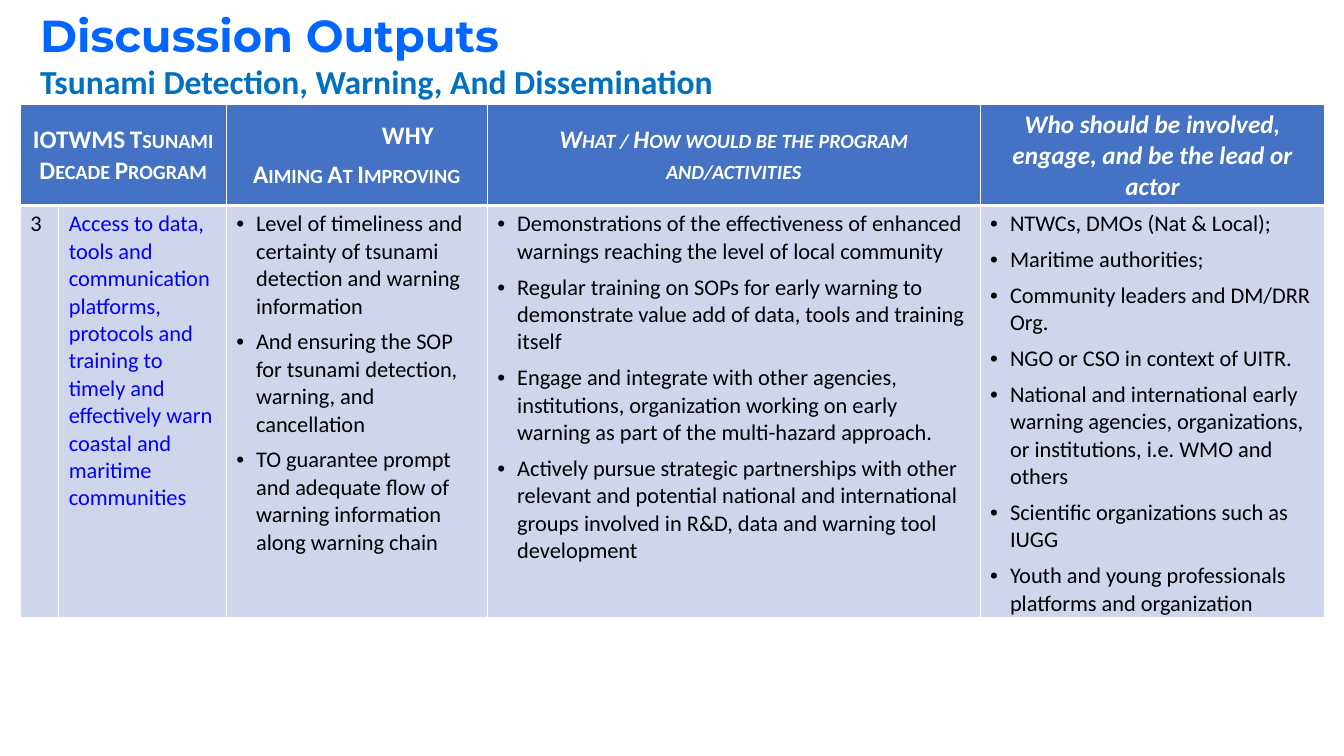
from dataclasses import dataclass, field
from typing import Any

from lxml.etree import SubElement
from pptx import Presentation
from pptx.dml.color import RGBColor
from pptx.enum.text import MSO_ANCHOR, PP_ALIGN
from pptx.oxml.ns import qn
from pptx.util import Cm, Pt

HUES = {
    "title": "0066FF",
    "sub": "0070C0",
    "head": "4472C4",
    "body": "CFD5EA",
    "topic": "0000FF",
    "ink": "000000",
    "white": "FFFFFF",
}
TITLE = {"name": "Montserrat", "size": Pt(32), "bold": True}
SUB = {"name": "Calibri", "size": Pt(24), "bold": True}
HEAD = {"name": "Calibri", "size": Pt(18), "bold": True, "italic": False}
SLANT = HEAD | {"italic": True}
BODY = {"name": "Calibri", "size": Pt(16), "bold": False, "italic": False}
COLS = [0.97, 4.22, 6.58, 12.42, 8.69]
ROWS = [2.49, 10.39]


@dataclass
class Entry:
    row: int
    col: int
    lines: list[str]
    style: dict[str, Any] = field(default_factory=lambda: BODY)
    hue: str = "ink"
    caps: bool = False
    list: bool = False
    shift: float = 0


ENTRIES = [
    Entry(0, 0, ["IOTWMS Tsunami Decade Program"], HEAD, "white", True),
    Entry(0, 2, ["WHY", "Aiming At Improving"], HEAD, "white", True, shift=1.27),
    Entry(0, 3, ["What / How would be the program and/activities"], SLANT, "white", True),
    Entry(0, 4, ["Who should be involved, engage, and be the lead or actor"], SLANT, "white"),
    Entry(1, 0, ["3"]),
    Entry(1, 1, ["Access to data, tools and communication platforms, protocols and training "
                 "to timely and effectively warn coastal and maritime communities"], hue="topic"),
    Entry(1, 2, [
        "Level of timeliness and certainty of tsunami detection and warning information",
        "And ensuring the SOP for tsunami detection, warning, and cancellation",
        "TO guarantee prompt and adequate flow of warning information along warning chain",
    ], list=True),
    Entry(1, 3, [
        "Demonstrations of the effectiveness of enhanced warnings reaching the level of local community",
        "Regular training on SOPs for early warning to demonstrate value add of data, tools and training itself",
        "Engage and integrate with other agencies, institutions, organization working on early warning "
        "as part of the multi-hazard approach.",
        "Actively pursue strategic partnerships with other relevant and potential national and "
        "international groups involved in R&D, data and warning tool development",
    ], list=True),
    Entry(1, 4, [
        "NTWCs, DMOs (Nat & Local);",
        "Maritime authorities;",
        "Community leaders and DM/DRR Org.",
        "NGO or CSO in context of UITR.",
        "National and international early warning agencies, organizations, or institutions, i.e. WMO and others",
        "Scientific organizations such as IUGG",
        "Youth and young professionals platforms and organization",
    ], list=True),
]


def paint(font: Any, style: dict[str, Any], hue: str) -> None:
    for name, value in style.items():
        setattr(font, name, value)
    font.color.rgb = RGBColor.from_string(HUES[hue])


def place(shape: Any, box: tuple[float, float, float, float]) -> None:
    for name, size in zip(("left", "top", "width", "height"), box):
        setattr(shape, name, Cm(size))


def write(shape: Any, text: str, style: dict[str, Any], hue: str) -> Any:
    shape.text_frame.word_wrap = True
    line = shape.text_frame.paragraphs[0]
    line.alignment = PP_ALIGN.LEFT
    run = line.add_run()
    run.text = text
    paint(run.font, style, hue)
    return line


def edge(cell: Any, head: bool) -> None:
    props = cell._tc.get_or_add_tcPr()
    for side in ("L", "R", "T", "B"):
        width = Pt(3 if head and side == "B" else 1)
        rule = SubElement(props, qn(f"a:ln{side}"), w=str(int(width)))
        fill = SubElement(rule, qn("a:solidFill"))
        SubElement(fill, qn("a:srgbClr"), val=HUES["white"])


def fill_cell(cell: Any, entry: Entry) -> None:
    head = entry.row == 0
    cell.vertical_anchor = MSO_ANCHOR.MIDDLE if head else MSO_ANCHOR.TOP
    frame = cell.text_frame
    for spot, text in enumerate(entry.lines):
        line = frame.add_paragraph() if spot else frame.paragraphs[0]
        line.alignment = PP_ALIGN.CENTER if head else PP_ALIGN.LEFT
        line.space_before = Pt(3 if spot else 0)
        line.space_after = Pt(3)
        props = line._p.get_or_add_pPr()
        if entry.list:
            props.set("marL", str(int(Cm(0.5))))
            props.set("indent", str(int(Cm(-0.5))))
            SubElement(props, qn("a:buFont"), typeface="Arial")
            SubElement(props, qn("a:buChar"), char="•")
        elif entry.shift and not spot:
            props.set("indent", str(int(Cm(entry.shift))))
        run = line.add_run()
        run.text = text
        paint(run.font, entry.style, entry.hue)
        if entry.caps:
            run._r.get_or_add_rPr().set("cap", "small")


def main() -> None:
    deck = Presentation()
    deck.slide_width, deck.slide_height = Cm(33.87), Cm(19.05)
    slide = deck.slides.add_slide(deck.slide_layouts[5])

    title = slide.shapes.title
    place(title, (0.76, 0, 31.34, 1.9))
    title.text_frame.vertical_anchor = MSO_ANCHOR.MIDDLE
    write(title, "Discussion Outputs", TITLE, "title").line_spacing = 0.9

    sub = slide.shapes.add_textbox(Cm(0.76), Cm(1.42), Cm(20.47), Cm(1.27))
    write(sub, "Tsunami Detection, Warning, And Dissemination", SUB, "sub")

    table = slide.shapes.add_table(
        len(ROWS), len(COLS), Cm(0.51), Cm(2.64), Cm(sum(COLS)), Cm(sum(ROWS))
    ).table
    for col, width in zip(table.columns, COLS):
        col.width = Cm(width)
    for row, height in zip(table.rows, ROWS):
        row.height = Cm(height)
    for spot, cell in enumerate(table.iter_cells()):
        head = spot < len(COLS)
        edge(cell, head)
        cell.fill.solid()
        cell.fill.fore_color.rgb = RGBColor.from_string(HUES["head" if head else "body"])
    table.cell(0, 0).merge(table.cell(0, 1))
    for entry in ENTRIES:
        fill_cell(table.cell(entry.row, entry.col), entry)

    deck.save("out.pptx")


if __name__ == "__main__":
    main()
